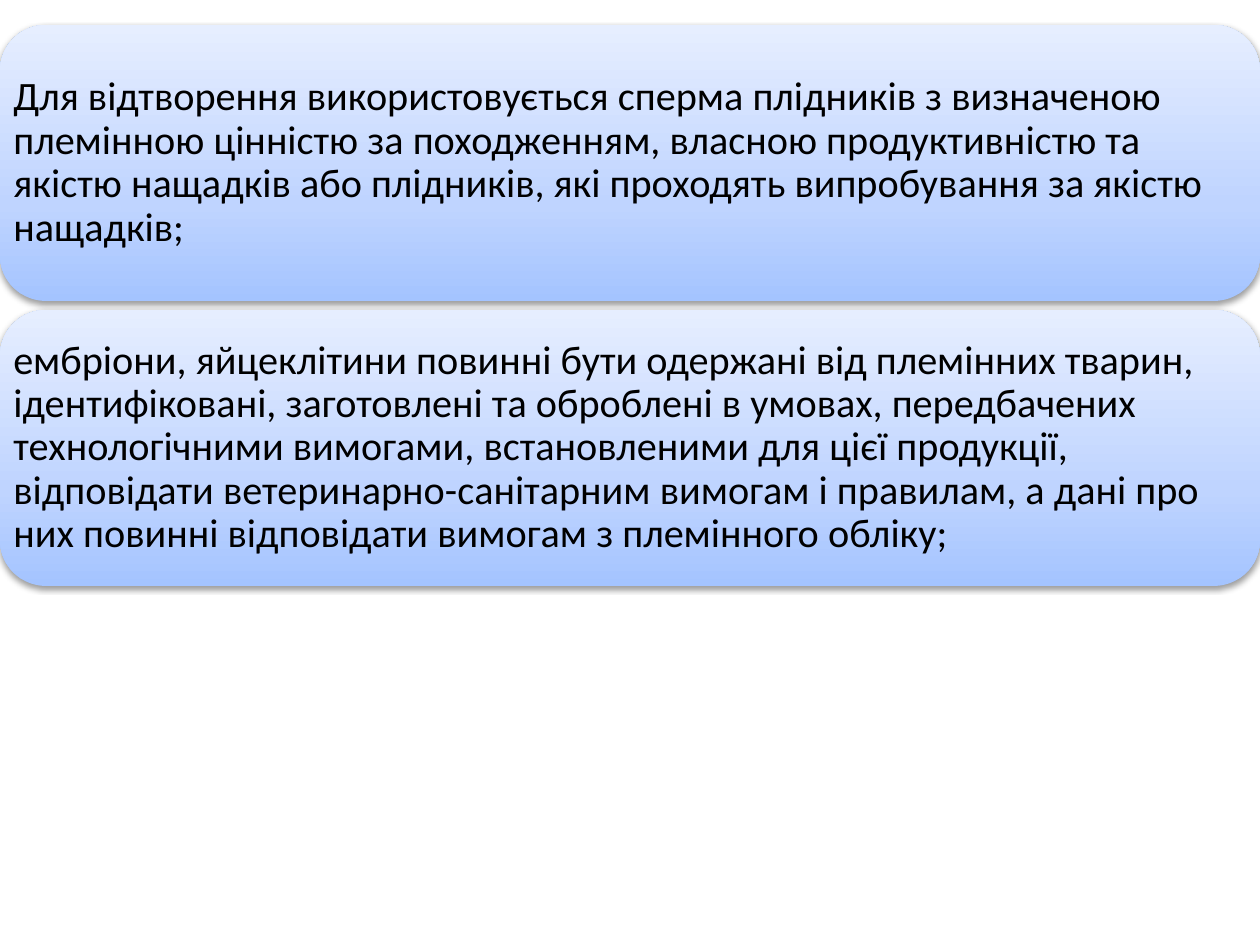
from lxml import etree
from pptx import Presentation
from pptx.dml.color import RGBColor
from pptx.enum.shapes import MSO_SHAPE
from pptx.enum.text import MSO_ANCHOR, PP_ALIGN
from pptx.oxml.ns import qn
from pptx.util import Pt

ROUNDED = MSO_SHAPE.ROUNDED_RECTANGLE
MIDDLE = MSO_ANCHOR.MIDDLE
LEFT = PP_ALIGN.LEFT
EMU_PER_PX = 914400 / 126
THEME = {
    "font": "Calibri",
    "size": Pt(23),
    "text": "000000",
    "gradient": [(0, "A4C4FF"), (35, "BFD4FF"), (100, "E6EEFF")],
    "shadow": "000000",
}


def px(length):
    return round(length * EMU_PER_PX)


def add_element(parent, tag, **attributes):
    element = etree.SubElement(parent, qn(tag))
    for name, value in attributes.items():
        element.set(name, str(value))
    return element


deck = Presentation()
deck.slide_width = px(1260)
deck.slide_height = px(945)
page = deck.slides.add_slide(deck.slide_layouts[6])

requirements = [
    "Для відтворення використовується сперма плідників з визначеною племінною "
    "цінністю за походженням, власною продуктивністю та якістю нащадків або "
    "плідників, які проходять випробування за якістю нащадків;",
    "ембріони, яйцеклітини повинні бути одержані від племінних тварин, "
    "ідентифіковані, заготовлені та оброблені в умовах, передбачених "
    "технологічними вимогами, встановленими для цієї продукції, відповідати "
    "ветеринарно-санітарним вимогам і правилам, а дані про них повинні "
    "відповідати вимогам з племінного обліку;",
]
first_top, box_height, gap = 25, 276, 9

for index, requirement in enumerate(requirements):
    top = first_top + index * (box_height + gap)
    box = page.shapes.add_shape(ROUNDED, 0, px(top), px(1260), px(box_height))
    box.line.fill.background()
    box.shadow.inherit = False
    properties = box._element.spPr

    gradient = etree.Element(qn("a:gradFill"), rotWithShape="1")
    stops = add_element(gradient, "a:gsLst")
    for position, color in THEME["gradient"]:
        stop = add_element(stops, "a:gs", pos=position * 1000)
        add_element(stop, "a:srgbClr", val=color)
    add_element(gradient, "a:lin", ang=270 * 60000, scaled=1)
    properties.find(qn("a:prstGeom")).addnext(gradient)

    shadow = add_element(
        properties.find(qn("a:effectLst")), "a:outerShdw",
        blurRad=Pt(3.1), dist=Pt(1.6), dir=90 * 60000, rotWithShape=0,
    )
    shadow_color = add_element(shadow, "a:srgbClr", val=THEME["shadow"])
    add_element(shadow_color, "a:alpha", val=38000)

    frame = box.text_frame
    frame.word_wrap = True
    frame.vertical_anchor = MIDDLE
    frame.margin_left = frame.margin_right = 0
    frame.margin_top = frame.margin_bottom = 0
    para = frame.paragraphs[0]
    para.text = requirement
    para.alignment = LEFT
    para.line_spacing = 0.9
    para.font.name = THEME["font"]
    para.font.size = THEME["size"]
    para.font.color.rgb = RGBColor.from_string(THEME["text"])

deck.save("out.pptx")
